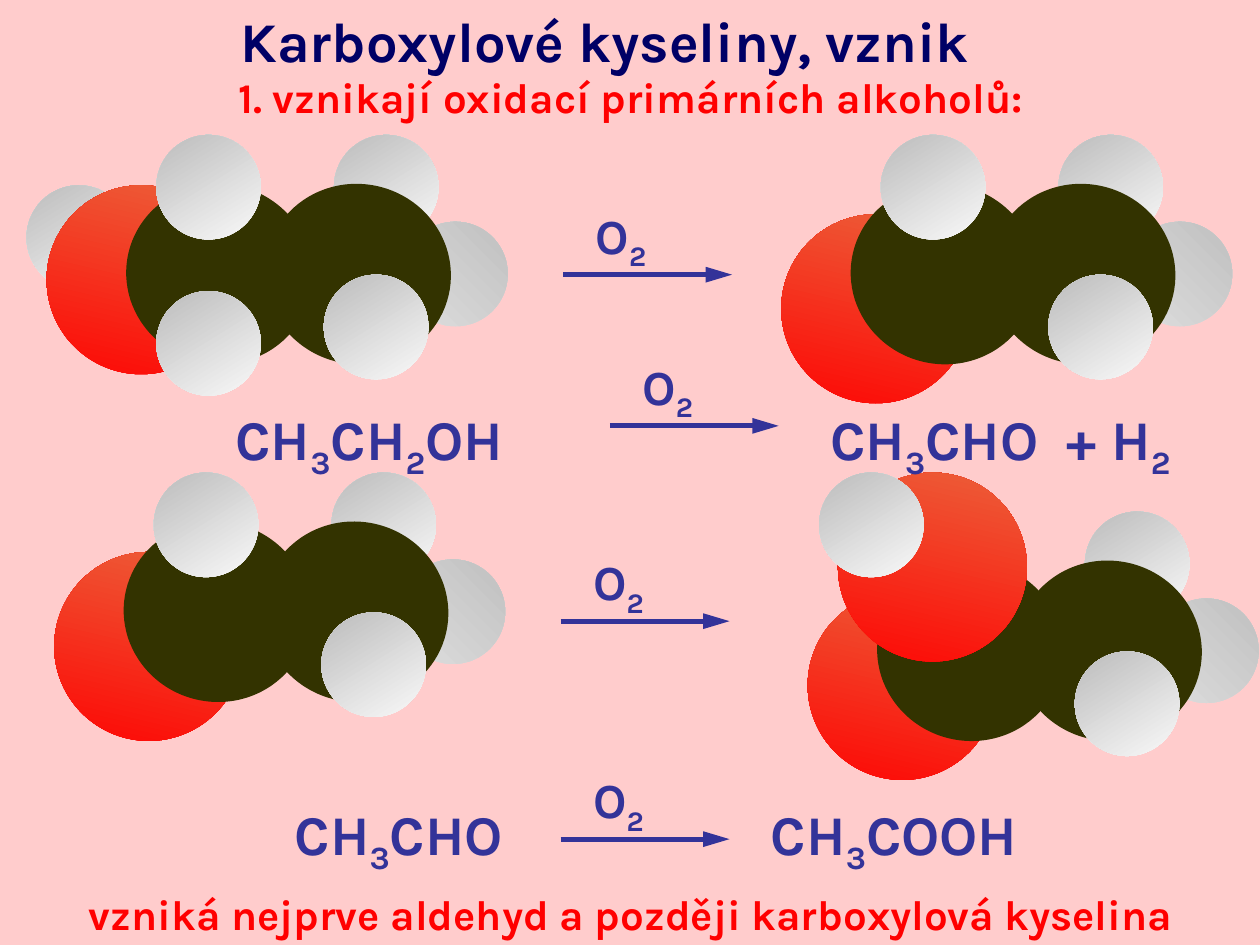
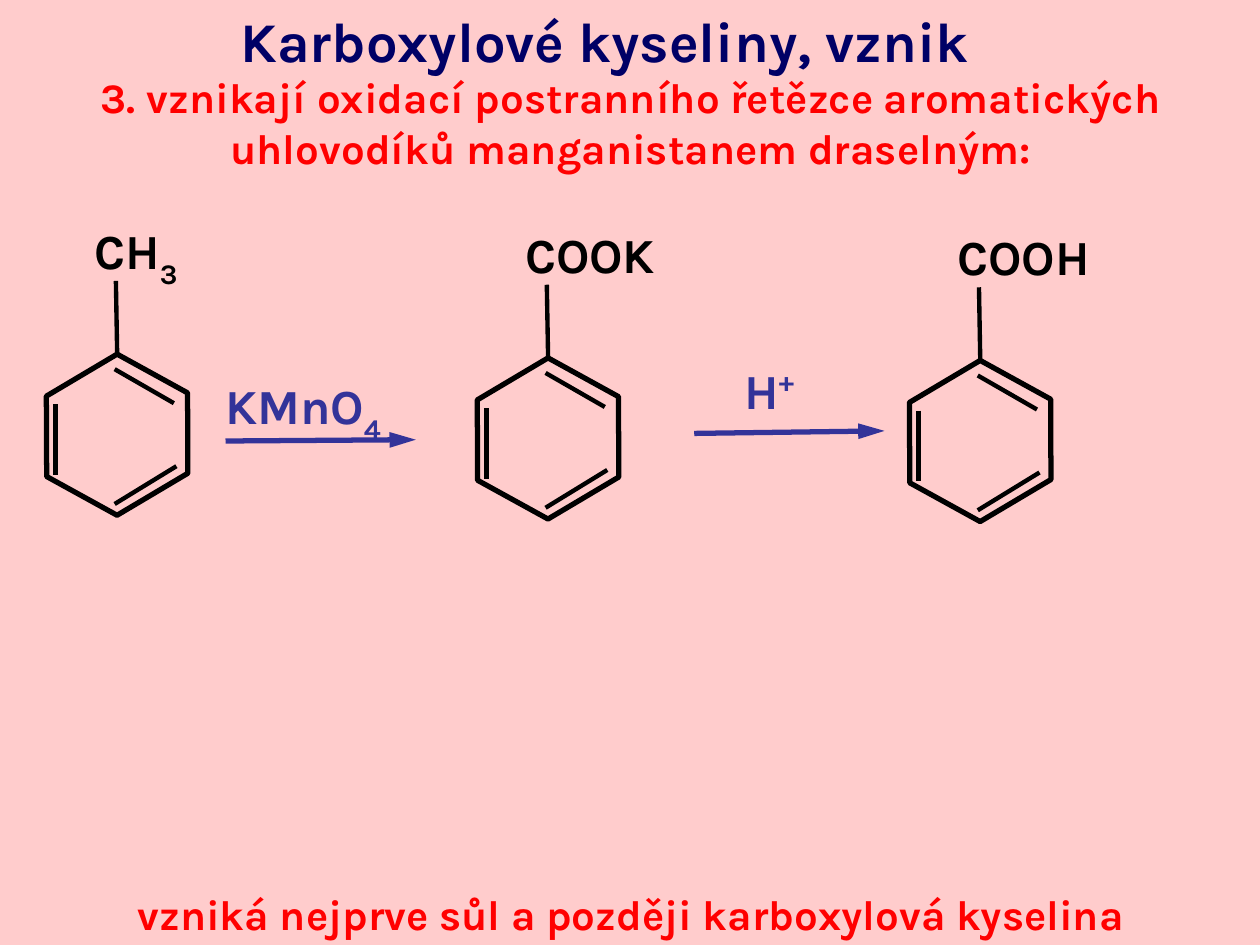
import itertools

import pptx
import pptx.dml.color
import pptx.enum.dml
import pptx.enum.shapes
import pptx.enum.text
import pptx.oxml
import pptx.util

EMU_PER_PX = 9144  # 100 px to the inch
FONT = "Karla"
PINK, RED, NAVY, BLUE, BLACK = "FFCCCC", "FF0000", "000066", "333399", "000000"
SHAPES = pptx.enum.shapes.MSO_SHAPE
CENTER = pptx.enum.text.PP_ALIGN.CENTER

# Atom styles: size, rotation, colours, clockwise gradient angle
ATOMS = {
    "hydrogen": ((83, 83), 193.2, ("FFFFFF", "B6B6B6"), 45),
    "pale hydrogen": ((83, 83), 0, ("DEDEDE", "C0C0C0"), 315),
    "oxygen": ((150, 150), 193.2, ("FF0000", "EA673E"), 90),
    "carbon": ((148, 143), 193.2, ("333300",), 0),
}


def px(length):
    return pptx.util.Emu(round(length * EMU_PER_PX))


def color(hex_string):
    return pptx.dml.color.RGBColor.from_string(hex_string)


def set_values(target, values):
    for name, value in values.items():
        setattr(target, name, value)


def add_text(slide, box, text, size, text_color, subscript=None,
             superscript="", **paragraph_format):
    """Add bold text; with a subscript offset, digits are lowered by it."""
    shape = slide.shapes.add_textbox(*map(px, box))
    shape.text_frame.word_wrap = True
    paragraph = shape.text_frame.paragraphs[0]
    set_values(paragraph, paragraph_format)
    parts = [(text, 0)]
    if subscript:
        parts = [("".join(group), subscript if lowered else 0)
                 for lowered, group in itertools.groupby(text, str.isdigit)]
    if superscript:
        parts.append((superscript, 36))
    for part, offset in parts:
        run = paragraph.add_run()
        run.text = part
        set_values(run.font, {"name": FONT, "size": pptx.util.Pt(size), "bold": True})
        run.font.color.rgb = color(text_color)
        if offset:
            run._r.get_or_add_rPr().set("baseline", str(offset * 1000))


def add_line(slide, start, end, line_color, width, arrow=False):
    line = slide.shapes.add_connector(
        pptx.enum.shapes.MSO_CONNECTOR.STRAIGHT, *map(px, start + end))
    line.line.color.rgb = color(line_color)
    line.line.width = pptx.util.Pt(width)
    properties = line._element.spPr
    if arrow:
        head = pptx.oxml.parse_xml(
            '<a:tailEnd xmlns:a="http://schemas.openxmlformats.org/drawingml/2006/main"'
            ' type="triangle" w="med" len="lg"/>')
        line.line._get_or_add_ln().append(head)
    properties.append(pptx.oxml.parse_xml(
        '<a:effectLst xmlns:a="http://schemas.openxmlformats.org/drawingml/2006/main"/>'))


def add_atom(slide, kind, left, top):
    size, rotation, colors, angle = ATOMS[kind]
    shape = slide.shapes.add_shape(SHAPES.OVAL, *map(px, (left, top) + size))
    shape.shadow.inherit = False
    shape.rotation = rotation
    shape.line.fill.background()
    if len(colors) == 1:
        shape.fill.solid()
        shape.fill.fore_color.rgb = color(colors[0])
        return
    shape.fill.gradient()
    shape.fill.gradient_angle = 360 - angle
    for stop, stop_color in zip(shape.fill.gradient_stops, colors):
        stop.color.rgb = color(stop_color)


def add_molecule(slide, origin, behind, front):
    """Draw a methyl group and a second carbon with atoms behind and in front."""
    atoms = [("hydrogen", 220, 0), ("pale hydrogen", 275, 69), ("carbon", 165, 39),
             *behind, ("carbon", 55, 39), ("hydrogen", 212, 111), *front]
    left, top = origin
    for kind, x, y in atoms:
        add_atom(slide, kind, left + x, top + y)


def add_reaction_arrow(slide, box, reagent="O2", label_left=16, label_width=79,
                       label_rise=55, subscript=-25, superscript=""):
    """Draw an arrow from the box's left top, rising by its height."""
    left, top, width, rise = box
    add_line(slide, (left, top), (left + width, top - rise), BLUE, 3, arrow=True)
    add_text(slide, (left + label_left, top - label_rise, label_width, 47), reagent,
             28, BLUE, subscript, superscript, line_spacing=0.8)


def add_benzene(slide, origin, group, label_width):
    left, top = origin
    ring = slide.shapes.add_shape(SHAPES.HEXAGON, *map(px, (left, top, 130, 110)))
    ring.shadow.inherit = False
    ring.adjustments[0] = 0.294
    ring.rotation = 329.3
    ring.fill.background()
    ring.line.color.rgb = color(BLACK)
    ring.line.width = pptx.util.Pt(3)
    # Three double bonds and the bond to the side group
    for x1, y1, x2, y2 in [(16, 31, 16, 87), (112, 80, 63, 110),
                           (63, 3, 110, 30), (64, -67, 65, -9)]:
        add_line(slide, (left + x1, top + y1), (left + x2, top + y2), BLACK, 2.5)
    add_text(slide, (left + 37, top - 120, label_width, 57), group, 28, BLACK, -30)


def add_base_slide(presentation, subtitle, conclusion):
    slide = presentation.slides.add_slide(presentation.slide_layouts[6])
    slide.background.fill.solid()
    slide.background.fill.fore_color.rgb = color(PINK)
    add_text(slide, (14, 52, 973, 90), subtitle, 24, RED, alignment=CENTER)
    add_text(slide, (181, 0, 638, 63), "Karboxylové kyseliny, vznik", 32, NAVY)
    add_text(slide, (14, 700, 973, 50), conclusion, 24, RED, alignment=CENTER)
    return slide


def build_alcohol_slide(presentation):
    slide = add_base_slide(presentation, "1. vznikají oxidací primárních alkoholů:",
                           "vzniká nejprve aldehyd a později karboxylová kyselina")
    # Molecules: ethanol, ethanal twice, acetic acid
    top_hydrogen = ("hydrogen", 79, 0)
    carbonyl = [("oxygen", 0, 63)]
    add_molecule(slide, (45, 107), [("hydrogen", -24, 40), ("oxygen", -8, 40)],
                 [top_hydrogen, ("hydrogen", 79, 124)])
    for origin in [(620, 107), (43, 375)]:
        add_molecule(slide, origin, carbonyl, [top_hydrogen])
    add_molecule(slide, (641, 406), carbonyl,
                 [("oxygen", 24, -31), ("hydrogen", 9, -31)])
    # Oxidation arrows
    for left, top in [(447, 218), (484, 338), (445, 493), (445, 666)]:
        add_reaction_arrow(slide, (left, top, 134, 0))
    # Formulas
    for left, top, width, formula in [
            (177, 322, 260, "CH3CH2OH"), (649, 322, 378, "CH3CHO  + H2"),
            (224, 635, 220, "CH3CHO"), (602, 635, 260, "CH3COOH")]:
        add_text(slide, (left, top, width, 53), formula, 32, BLUE, -25, line_spacing=0.8)


def build_aromatic_slide(presentation):
    slide = add_base_slide(
        presentation,
        "3. vznikají oxidací postranního řetězce aromatických "
        "uhlovodíků manganistanem draselným:",
        "vzniká nejprve sůl a později karboxylová kyselina")
    # Reaction steps
    add_reaction_arrow(slide, (179, 350, 151, 1), "KMnO4", -10, 167, 53, -30)
    add_reaction_arrow(slide, (551, 344, 151, 2), "H", 30, 77, 54, superscript="+")
    # Toluene, potassium benzoate, benzoic acid
    for origin, group, label_width in [((28, 290), "CH3", 93), ((370, 293), "COOK", 133),
                                       ((713, 295), "COOH", 136)]:
        add_benzene(slide, origin, group, label_width)


def main():
    presentation = pptx.Presentation()
    set_values(presentation, {"slide_width": px(1000), "slide_height": px(750)})
    build_alcohol_slide(presentation)
    build_aromatic_slide(presentation)
    presentation.save("out.pptx")


if __name__ == "__main__":
    main()
